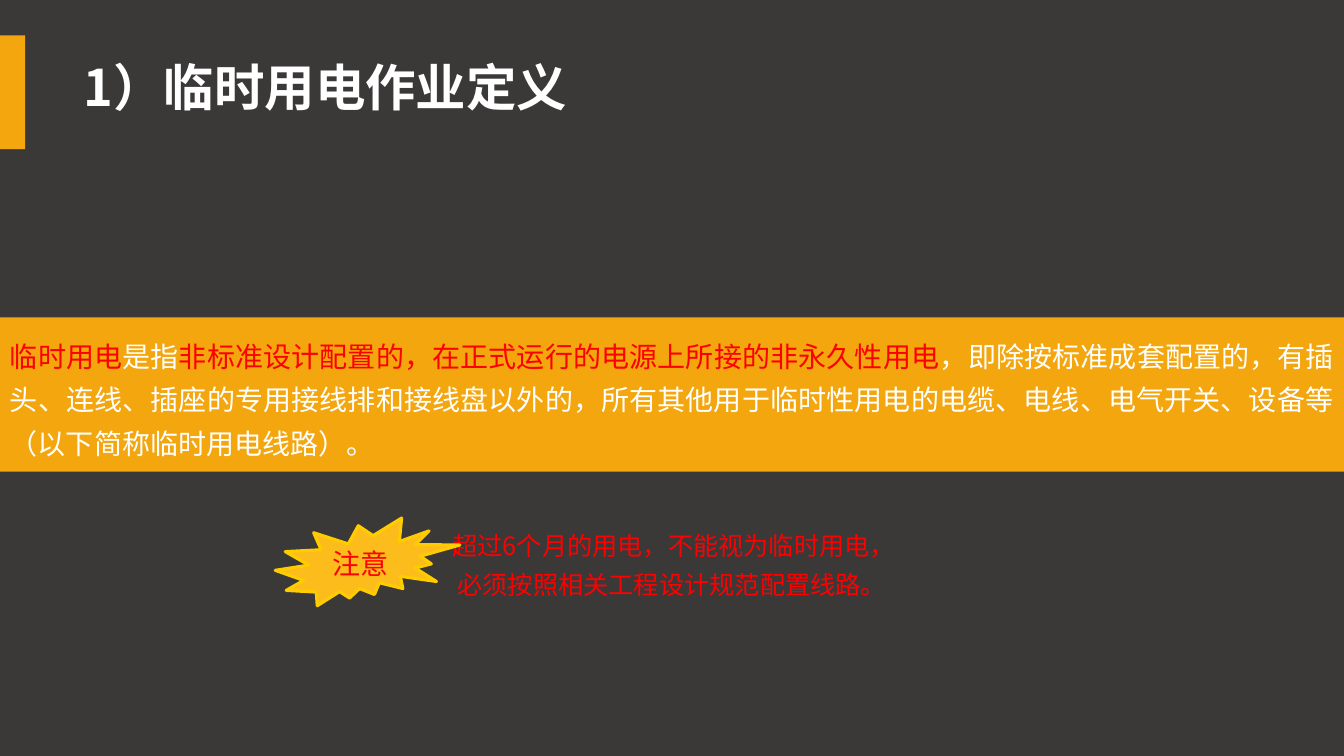
from pptx import Presentation
from pptx.dml.color import RGBColor
from pptx.enum.shapes import MSO_SHAPE as Shape
from pptx.enum.text import MSO_ANCHOR as Anchor, MSO_AUTO_SIZE as AutoSize, PP_ALIGN as Align
from pptx.oxml.ns import qn
from pptx.util import Inches, Pt

CHARCOAL = RGBColor(0x3B, 0x38, 0x38)
ORANGE = RGBColor(0xF3, 0xA6, 0x0D)
AMBER = RGBColor(0xFC, 0xBC, 0x1C)
YELLOW = RGBColor(0xFF, 0xCC, 0x00)
RED = RGBColor(0xFF, 0x00, 0x00)
WHITE = RGBColor(0xFF, 0xFF, 0xFF)


def write(p, text, size=20, color=RED, bold=False, font="Noto Sans CJK SC"):
    r = p.add_run()
    r.text = text
    r.font.size, r.font.bold, r.font.name = Pt(size), bold, font
    r.font.color.rgb = color
    ea = r._r.get_or_add_rPr().makeelement(qn("a:ea"), {"typeface": font})
    r.font._element.find(qn("a:latin")).addnext(ea)


class Deck:
    """Holds the style and the current slide, with boxes in percent of the slide's size."""

    def __init__(self, width, height, background):
        self.prs = Presentation()
        self.prs.slide_width, self.prs.slide_height = Inches(width), Inches(height)
        self.s = self.prs.slides.add_slide(self.prs.slide_layouts[5])
        fill = self.s.background.fill
        fill.solid()
        fill.fore_color.rgb = background

    def box(self, x, y, w, h):
        sw, sh = self.prs.slide_width, self.prs.slide_height
        return [int(v * side / 100) for v, side in ((x, sw), (y, sh), (w, sw), (h, sh))]

    def frame(self, sp, anchor=Anchor.MIDDLE):
        tf = sp.text_frame
        tf.word_wrap, tf.auto_size, tf.vertical_anchor = True, AutoSize.NONE, anchor
        return tf

    def title(self, text, *at):
        sp = self.s.shapes.title
        sp.left, sp.top, sp.width, sp.height = self.box(*at)
        p = self.frame(sp).paragraphs[0]
        p.alignment, p.line_spacing = Align.LEFT, 0.9
        write(p, text, size=36, color=WHITE, bold=True)

    def shape(self, kind, fill, *at, line=None):
        sp = self.s.shapes.add_shape(kind, *self.box(*at))
        sp.shadow.inherit = False
        sp.fill.solid()
        sp.fill.fore_color.rgb = fill
        if line:
            sp.line.color.rgb, sp.line.width = line, Pt(2.25)
        else:
            sp.line.fill.background()
        return sp

    def band(self, runs, *at):
        p = self.frame(self.shape(Shape.RECTANGLE, ORANGE, *at)).paragraphs[0]
        p.alignment, p.line_spacing = Align.JUSTIFY, 1.3
        for text, color in runs:
            write(p, text, color=color)

    def note(self, lines, *at):
        tf = self.frame(self.s.shapes.add_textbox(*self.box(*at)), Anchor.TOP)
        for i, (text, indent) in enumerate(lines):
            p = tf.add_paragraph() if i else tf.paragraphs[0]
            p.line_spacing = 1.3
            p._p.get_or_add_pPr().set("marL", str(Inches(indent)))
            write(p, text, size=18)

    def burst(self, text, *at):
        tf = self.frame(self.shape(Shape.EXPLOSION2, AMBER, *at, line=YELLOW))
        tf.margin_left = tf.margin_right = tf.margin_top = tf.margin_bottom = 0
        p = tf.paragraphs[0]
        p.alignment = Align.CENTER
        write(p, text)


def main():
    deck = Deck(13.33, 7.5, CHARCOAL)
    deck.shape(Shape.RECTANGLE, ORANGE, 0, 4.67, 1.88, 15.07)
    deck.title("1）临时用电作业定义", 5.48, 5.07, 65.64, 13.6)
    deck.band([
        ("临时用电", RED),
        ("是指", WHITE),
        ("非标准设计配置的，在正式运行的电源上所接的非永久性用电", RED),
        ("，即除按标准成套配置的，有插头、连线、插座的专用接线排和接线盘以外的，"
         "所有其他用于临时性用电的电缆、电线、电气开关、设备等（以下简称临时用电线路）。", WHITE),
    ], 0, 42, 100, 20.4)
    deck.note([
        ("超过6个月的用电，不能视为临时用电，", 0),
        ("必须按照相关工程设计规范配置线路。", 0.05),
    ], 32.93, 68.27, 48.84, 11.87)
    deck.burst("注意", 20.48, 68.53, 13.73, 11.6)
    deck.prs.save("out.pptx")


if __name__ == "__main__":
    main()
